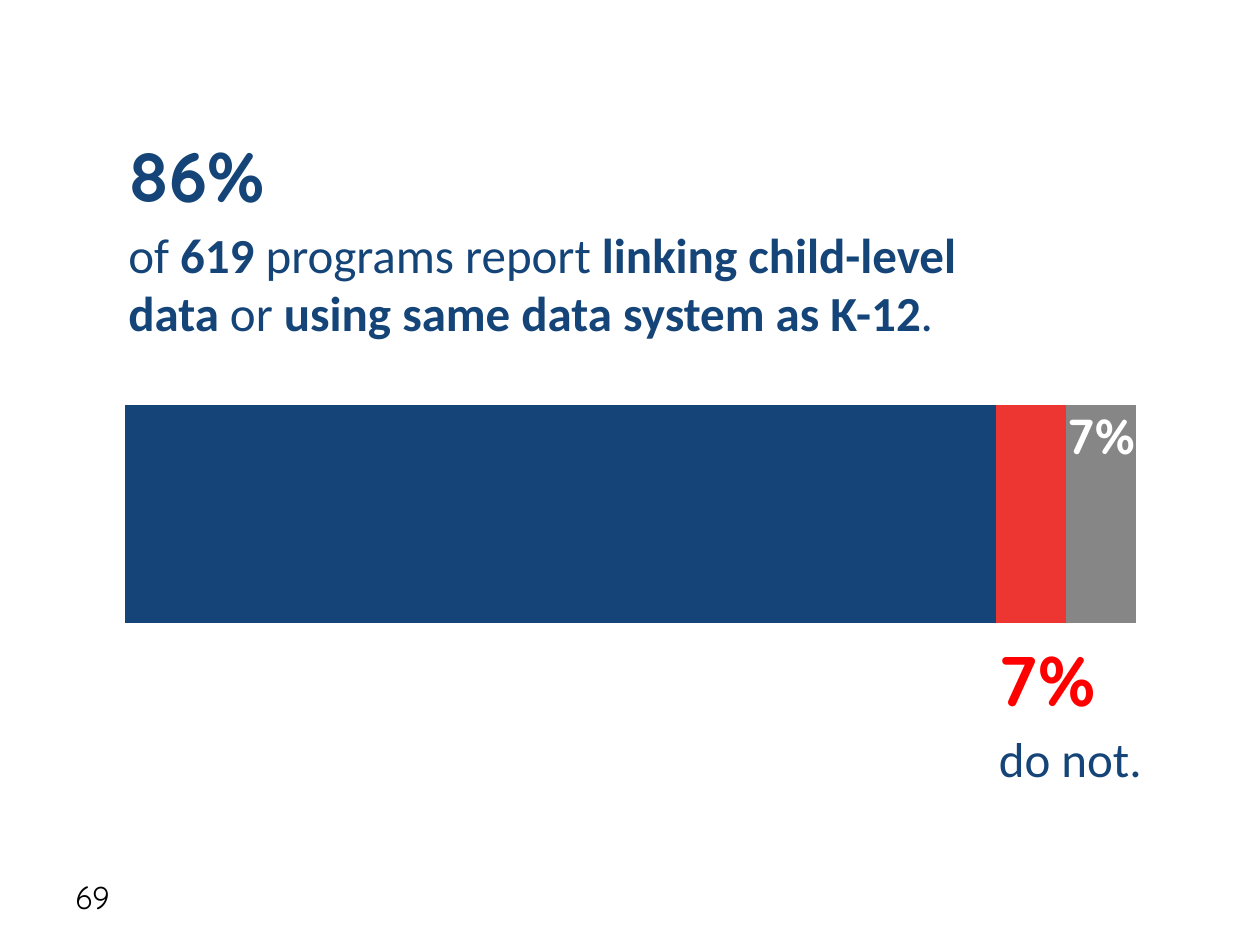
import pptx
import pptx.chart.data
import pptx.dml.color
import pptx.enum.chart
import pptx.enum.text
import pptx.oxml
import pptx.oxml.ns
import pptx.util

Inches = pptx.util.Inches
RGBColor = pptx.dml.color.RGBColor

NAVY = RGBColor(0x15, 0x45, 0x78)
RED = RGBColor(0xED, 0x35, 0x32)
GRAY = RGBColor(0x86, 0x86, 0x87)
BRIGHT_RED = RGBColor(0xFF, 0x00, 0x00)
BLACK = RGBColor(0x00, 0x00, 0x00)
WHITE = RGBColor(0xFF, 0xFF, 0xFF)

SHARES = [(100, NAVY), (8, RED), (8, GRAY)]
PLOT_BOX = {"x": 0.017, "y": 0.047, "w": 0.963, "h": 0.931}


def add_text(slide, box, text, size=28, font="Calibri", color=NAVY, bold=False,
             anchor=pptx.enum.text.MSO_ANCHOR.TOP):
    """Add one paragraph; every second part between ** marks switches bold."""
    tf = slide.shapes.add_textbox(*map(Inches, box)).text_frame
    tf.word_wrap = True
    tf.vertical_anchor = anchor
    p = tf.paragraphs[0]
    for i, part in enumerate(text.split("**")):
        r = p.add_run()
        r.text = part
        r.font.size = pptx.util.Pt(size)
        r.font.name = font
        r.font.color.rgb = color
        r.font.bold = bold != (i % 2 == 1)


def set_plot_box(chart):
    """Fix the inner plot area as fractions of the chart frame."""
    modes = "".join(f'<c:{k}Mode val="edge"/>' for k in "xy")
    sizes = "".join(f'<c:{k} val="{v}"/>' for k, v in PLOT_BOX.items())
    layout = pptx.oxml.parse_xml(
        f'<c:layout {pptx.oxml.ns.nsdecls("c")}><c:manualLayout>'
        f'<c:layoutTarget val="inner"/>{modes}{sizes}</c:manualLayout></c:layout>')
    plot_area = chart.element.find(".//" + pptx.oxml.ns.qn("c:plotArea"))
    for old in plot_area.findall(pptx.oxml.ns.qn("c:layout")):
        plot_area.remove(old)
    plot_area.insert(0, layout)


def add_share_bar(slide, box):
    data = pptx.chart.data.CategoryChartData()
    data.categories = ["1"]
    for i, (value, _) in enumerate(SHARES, 1):
        data.add_series(f"Series {i}", [value])
    chart = slide.shapes.add_chart(
        pptx.enum.chart.XL_CHART_TYPE.BAR_STACKED, *map(Inches, box), data).chart
    chart.has_legend = False
    chart.has_title = False
    chart.font.size = pptx.util.Pt(18)
    chart.font.name = "Calibri"
    chart.font.color.rgb = BLACK
    for axis in (chart.category_axis, chart.value_axis):
        axis.visible = False
        axis.has_major_gridlines = False
    axis = chart.value_axis
    axis.minimum_scale = 0
    axis.maximum_scale = sum(value for value, _ in SHARES)
    axis.major_unit = 23
    axis.tick_labels.number_format = "0%"
    axis.tick_labels.number_format_is_linked = False
    plot = chart.plots[0]
    plot.gap_width = 150
    plot.overlap = 100
    plot.vary_by_categories = False
    for series, (_, color) in zip(plot.series, SHARES):
        series.format.fill.solid()
        series.format.fill.fore_color.rgb = color
    set_plot_box(chart)


def add_callout(slide, box, percent, text, color=NAVY):
    """Put a large percentage above its explanation."""
    left, top, width, height = box
    add_text(slide, (left, top + 0.73, width, height - 0.73), text)
    add_text(slide, (left, top, 4.83, 0.77), percent, size=40,
             font="Quicksand", color=color, bold=True)


def main():
    prs = pptx.Presentation()
    prs.slide_width, prs.slide_height = Inches(10), Inches(7.5)
    slide = prs.slides.add_slide(prs.slide_layouts[6])
    add_share_bar(slide, (0.85, 1.7, 8.33, 4.64))
    add_text(slide, (0.5, 6.92, 2.33, 0.4), "69", size=18, font="Quicksand",
             color=BLACK, anchor=pptx.enum.text.MSO_ANCHOR.MIDDLE)
    add_callout(slide, (0.92, 1, 6.92, 1.77), "86%",
                "of **619** programs report **linking child-level data** or "
                "**using same data system as K-12**.")
    add_callout(slide, (7.83, 5, 4.44, 1.3), "7%", "do not.", color=BRIGHT_RED)
    add_text(slide, (8.37, 3.17, 1.33, 0.57), "7%", font="Quicksand",
             color=WHITE, bold=True)
    prs.save("out.pptx")


if __name__ == "__main__":
    main()
